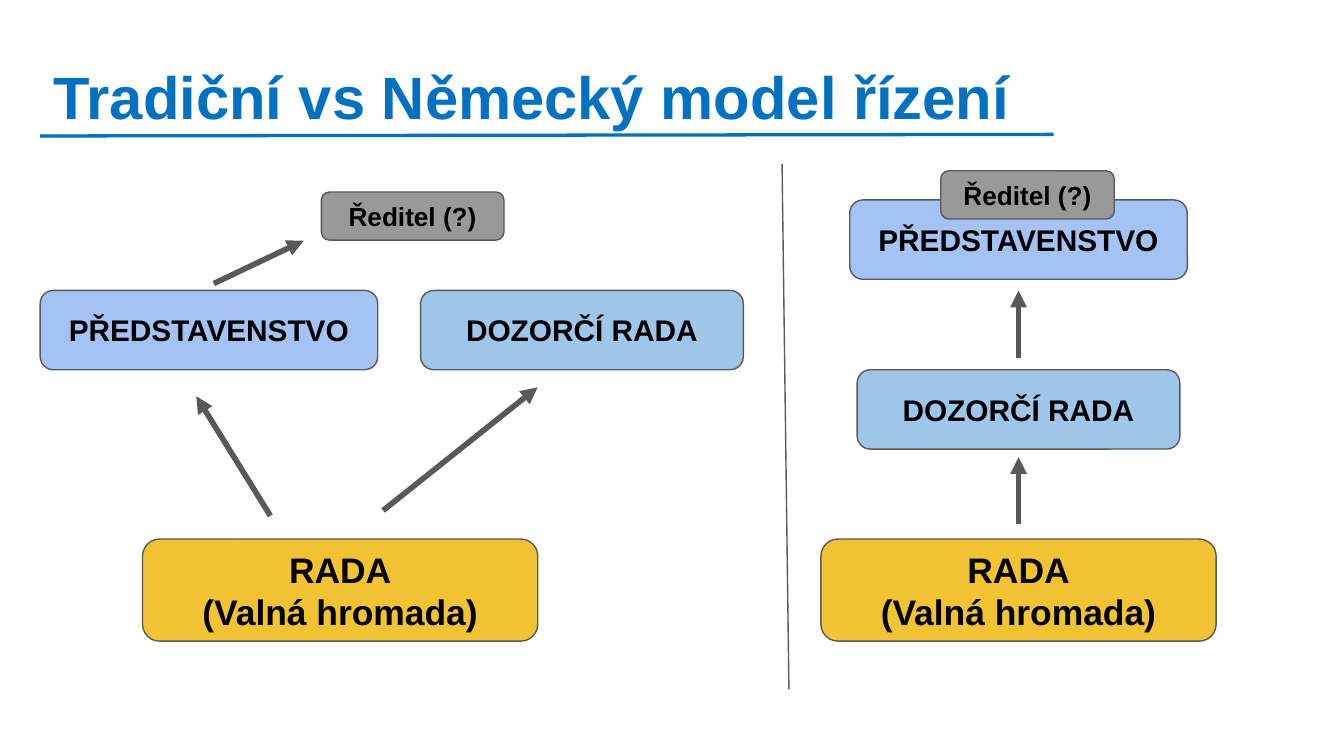
from dataclasses import dataclass

from lxml import etree
from pptx import Presentation
from pptx.dml.color import RGBColor
from pptx.enum.shapes import MSO_CONNECTOR, MSO_SHAPE
from pptx.enum.text import MSO_ANCHOR, PP_ALIGN
from pptx.oxml.ns import qn
from pptx.util import Cm, Pt

ROUNDED = MSO_SHAPE.ROUNDED_RECTANGLE
STRAIGHT = MSO_CONNECTOR.STRAIGHT
MIDDLE = MSO_ANCHOR.MIDDLE
LEFT, CENTER = PP_ALIGN.LEFT, PP_ALIGN.CENTER


@dataclass(frozen=True)
class Theme:
    font: str = "Arial"
    accent: str = "0070C0"
    outline: str = "595959"
    text: str = "000000"
    council: str = "F1C232"
    board: str = "A4C2F4"
    supervisors: str = "9FC5E8"
    director: str = "999999"
    title_size: int = 32
    council_size: int = 19
    body_size: int = 16
    director_size: int = 14


@dataclass(frozen=True)
class Role:
    """Look shared by every box that stands for the same body."""
    lines: tuple
    height: float
    fill: str
    size: int


THEME = Theme()
COUNCIL = Role(("RADA", "(Valná hromada)"), 1.93, THEME.council, THEME.council_size)
BOARD = Role(("PŘEDSTAVENSTVO",), 1.5, THEME.board, THEME.body_size)
SUPERVISORS = Role(("DOZORČÍ RADA",), 1.5, THEME.supervisors, THEME.body_size)
DIRECTOR = Role(("Ředitel (?)",), 0.91, THEME.director, THEME.director_size)

COUNCIL_WIDTH, BOARD_WIDTH, SUPERVISORS_WIDTH = 7.47, 6.38, 6.1
COUNCIL_TOP = 10.19
LEFT_ROW_TOP = 5.49
GERMAN_CENTER = 19.25


def write_text(box, lines, *, size, color=THEME.text, align=CENTER, inset=0.25):
    frame = box.text_frame
    frame.word_wrap = True
    frame.vertical_anchor = MIDDLE
    frame.margin_left = frame.margin_right = Cm(0.25)
    frame.margin_top = frame.margin_bottom = Cm(inset)
    for index, line in enumerate(lines):
        para = frame.paragraphs[0] if index == 0 else frame.add_paragraph()
        para.alignment = align
        span = para.add_run()
        span.text = line
        span.font.name = THEME.font
        span.font.size = Pt(size)
        span.font.bold = True
        span.font.color.rgb = RGBColor.from_string(color)


def add_title(slide, text):
    box = slide.shapes.add_textbox(Cm(0.76), Cm(0.51), Cm(20.17), Cm(2.59))
    write_text(box, [text], size=THEME.title_size, color=THEME.accent,
               align=LEFT, inset=0.13)


def add_role(slide, role, center, top, width):
    """Place a role's box by its horizontal centre and its top edge."""
    box = slide.shapes.add_shape(
        ROUNDED, Cm(center - width / 2), Cm(top), Cm(width), Cm(role.height))
    box.shadow.inherit = False
    box.fill.solid()
    box.fill.fore_color.rgb = RGBColor.from_string(role.fill)
    box.line.color.rgb = RGBColor.from_string(THEME.outline)
    box.line.width = Pt(0.75)
    write_text(box, role.lines, size=role.size)


def add_line(slide, start, end, color=THEME.outline, width=0.75):
    line = slide.shapes.add_connector(
        STRAIGHT, *(Cm(value) for value in (*start, *end)))
    line.line.color.rgb = RGBColor.from_string(color)
    line.line.width = Pt(width)
    etree.SubElement(line.element.spPr, qn("a:effectLst"))
    return line


def add_arrow(slide, start, end):
    arrow = add_line(slide, start, end, width=3)
    etree.SubElement(arrow.line._get_or_add_ln(), qn("a:tailEnd"), type="triangle")


def add_traditional_model(slide):
    add_role(slide, COUNCIL, 6.43, COUNCIL_TOP, COUNCIL_WIDTH)
    add_role(slide, BOARD, 3.95, LEFT_ROW_TOP, BOARD_WIDTH)
    add_role(slide, SUPERVISORS, 11, LEFT_ROW_TOP, SUPERVISORS_WIDTH)
    add_role(slide, DIRECTOR, 7.8, 3.63, 3.45)
    add_arrow(slide, (5.11, 9.75), (3.71, 7.49))
    add_arrow(slide, (7.24, 9.65), (10.16, 7.32))
    add_arrow(slide, (4.04, 5.36), (5.74, 4.55))


def add_german_model(slide):
    add_role(slide, COUNCIL, GERMAN_CENTER, COUNCIL_TOP, COUNCIL_WIDTH)
    add_role(slide, BOARD, GERMAN_CENTER, 3.78, BOARD_WIDTH)
    add_role(slide, SUPERVISORS, GERMAN_CENTER, 6.99, SUPERVISORS_WIDTH)
    add_role(slide, DIRECTOR, 19.42, 3.23, 3.28)
    for bottom in (9.91, 6.76):
        add_arrow(slide, (GERMAN_CENTER, bottom), (GERMAN_CENTER, bottom - 1.27))


def main():
    deck = Presentation()
    deck.slide_width, deck.slide_height = Cm(25.4), Cm(14.29)
    slide = deck.slides.add_slide(deck.slide_layouts[6])
    add_line(slide, (0.76, 2.57), (19.91, 2.54), color=THEME.accent, width=1.75)
    add_title(slide, "Tradiční vs Německý model řízení")
    add_traditional_model(slide)
    add_german_model(slide)
    add_line(slide, (14.78, 3.1), (14.91, 13.03))
    deck.save("out.pptx")


if __name__ == "__main__":
    main()
